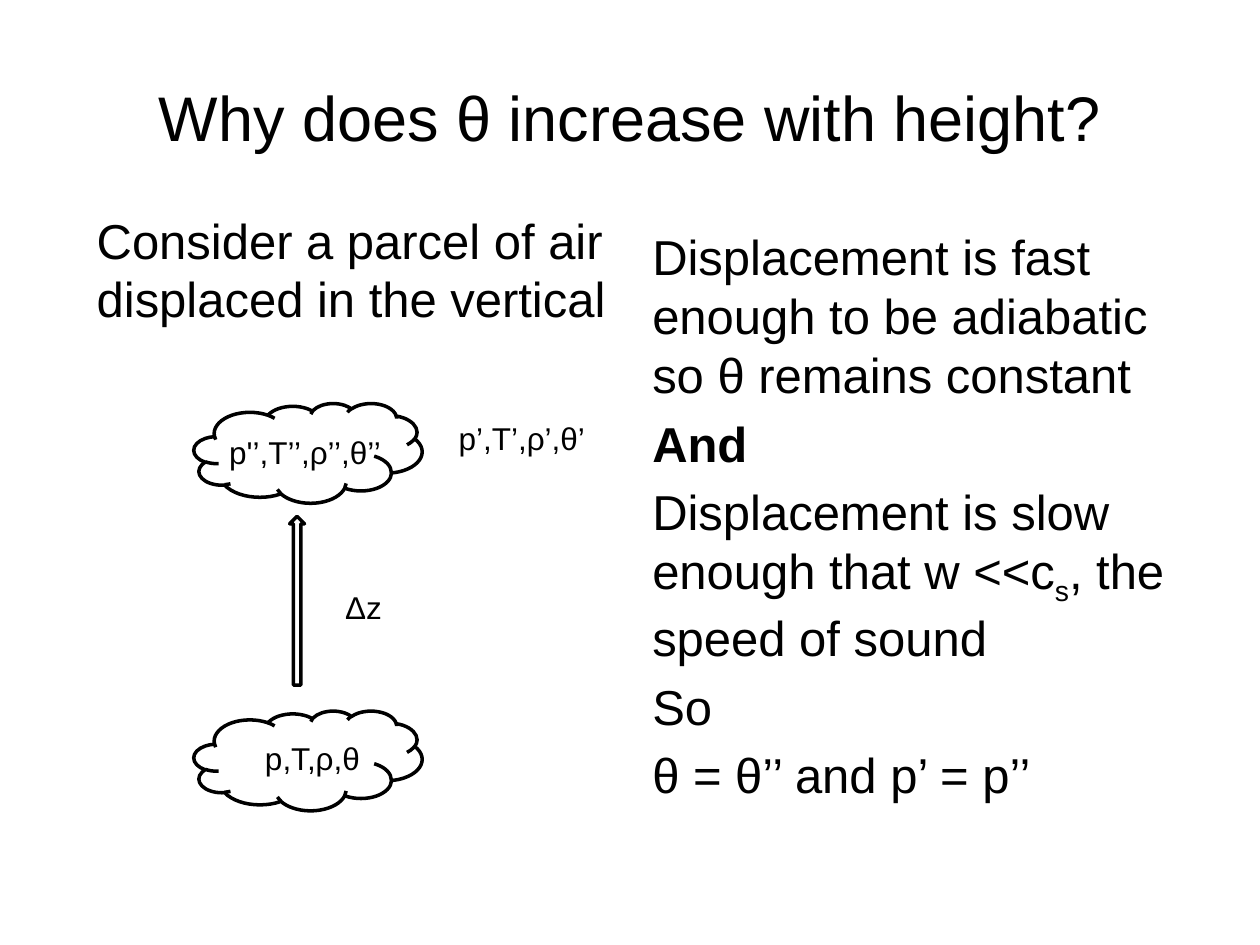
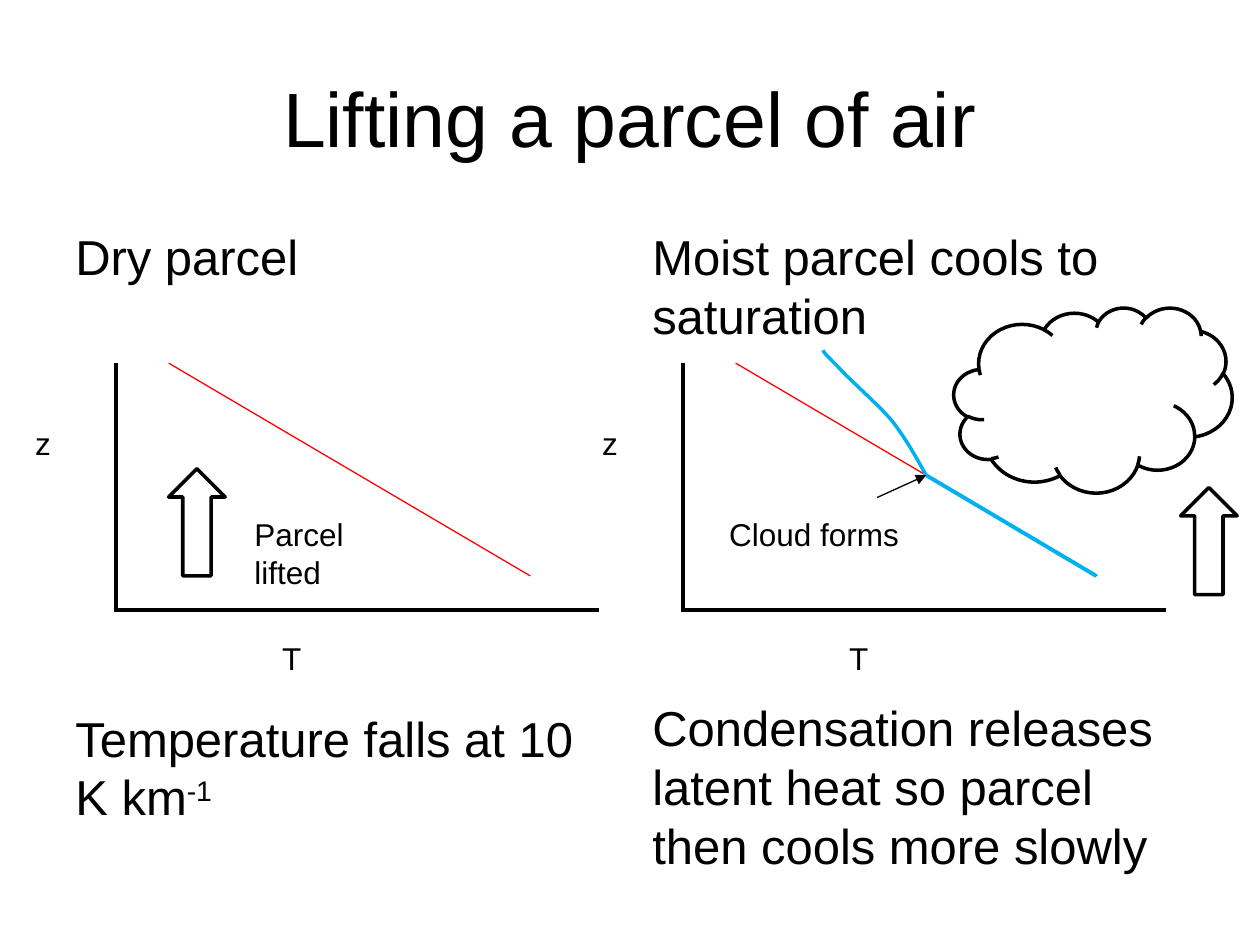
from lxml import etree
from pptx import Presentation
from pptx.dml.color import RGBColor
from pptx.enum.shapes import MSO_CONNECTOR, MSO_SHAPE
from pptx.enum.text import MSO_ANCHOR, PP_ALIGN
from pptx.oxml.ns import qn
from pptx.util import Cm, Pt

LEFT, CENTER = PP_ALIGN.LEFT, PP_ALIGN.CENTER
MIDDLE = MSO_ANCHOR.MIDDLE
CLOUD, UP_ARROW = MSO_SHAPE.CLOUD, MSO_SHAPE.UP_ARROW
STRAIGHT = MSO_CONNECTOR.STRAIGHT

COLOURS = {"ink": "000000", "paper": "FFFFFF", "dry": "FF0000", "moist": "00B0F0"}
FONT = "Arial"
BODY_SIZE, LABEL_SIZE = 28, 18
TITLE_ONLY = 5

LEFT_COLUMN, RIGHT_COLUMN, COLUMN_TOP = 1.27, 12.9, 4.45
COLUMN_WIDTH = 11.23
LABEL_HEIGHT = 1.02


def colour(name):
    return RGBColor.from_string(COLOURS[name])


def bezier(start, *curves, steps=10):
    """Points along joined cubic curves, each given as two controls and an end."""
    points = [start]
    for first, second, end in curves:
        for step in range(1, steps + 1):
            t = step / steps
            points.append(tuple(
                (1 - t) ** 3 * a + 3 * (1 - t) ** 2 * t * b
                + 3 * (1 - t) * t ** 2 * c + t ** 3 * d
                for a, b, c, d in zip(start, first, second, end)))
        start = end
    return points


class Page:
    def __init__(self, deck, title, title_size):
        self.page = deck.slides.add_slide(deck.slide_layouts[TITLE_ONLY])
        self.shapes = self.page.shapes
        box = self.shapes.title
        box.left, box.top, box.width, box.height = Cm(1.27), Cm(0.76), Cm(22.86), Cm(3.18)
        box.text_frame.vertical_anchor = MIDDLE
        self.paragraph(box.text_frame.paragraphs[0], title, title_size, CENTER)

    def paragraph(self, para, content, size, align=LEFT, bold=False):
        """Content is a string, or a list of (text, baseline shift in percent)."""
        para.alignment = align
        para.font.name, para.font.size, para.font.bold = FONT, Pt(size), bold
        para.font.color.rgb = colour("ink")
        for text, shift in [(content, 0)] if isinstance(content, str) else content:
            span = para.add_run()
            span.text = text
            if shift:
                span._r.get_or_add_rPr().set("baseline", str(shift * 1000))

    def frame(self, left, top, width, height):
        frame = self.shapes.add_textbox(Cm(left), Cm(top), Cm(width), Cm(height)).text_frame
        frame.word_wrap = True
        return frame

    def body(self, left, top, height, *contents, bold=()):
        frame = self.frame(left, top, COLUMN_WIDTH, height)
        for index, content in enumerate(contents):
            para = frame.add_paragraph() if index else frame.paragraphs[0]
            para.space_before = Pt(0.2 * BODY_SIZE)
            self.paragraph(para, content, BODY_SIZE, bold=index in bold)

    def label(self, text, left, top, width, height=LABEL_HEIGHT, align=LEFT):
        frame = self.frame(left, top, width, height)
        self.paragraph(frame.paragraphs[0], text, LABEL_SIZE, align)

    def shape(self, kind, left, top, width, height):
        shape = self.shapes.add_shape(kind, Cm(left), Cm(top), Cm(width), Cm(height))
        shape.shadow.inherit = False
        shape.fill.solid()
        shape.fill.fore_color.rgb = colour("paper")
        shape.line.color.rgb = colour("ink")
        shape.line.width = Pt(2)

    def line(self, start, end, name="ink", width=2.25, arrow=False):
        line = self.shapes.add_connector(STRAIGHT, *map(Cm, start + end))
        line.line.color.rgb = colour(name)
        line.line.width = Pt(width)
        properties = line._element.spPr
        if arrow:
            etree.SubElement(line.line._get_or_add_ln(), qn("a:tailEnd"), type="triangle")
        etree.SubElement(properties, qn("a:effectLst"))

    def curve(self, points, name):
        points = [(Cm(x), Cm(y)) for x, y in points]
        builder = self.shapes.build_freeform(*points[0])
        builder.add_line_segments(points[1:], close=False)
        curve = builder.convert_to_shape()
        curve.shadow.inherit = False
        curve.fill.background()
        curve.line.color.rgb = colour(name)
        curve.line.width = Pt(2)

    def height_chart(self, offset):
        """Axes of height against temperature with the dry line."""
        corner = (2.34 + offset, 12.29)
        self.line((corner[0], 7.32), (corner[0], 12.34))
        self.line(corner, (12.07 + offset, 12.29))
        self.label("T", 5.44 + offset, 12.75, 2.36)
        self.label("z", 0.46 + offset, 8.43, 1.52)
        self.line((10.69 + offset, 11.61), (3.4 + offset, 7.32), "dry", 0.75)


def displaced_parcel(deck):
    page = Page(deck, "Why does θ increase with height?", 36)
    page.body(1.7, 4.11, 3, "Consider a parcel of air displaced in the vertical")
    page.body(
        RIGHT_COLUMN, COLUMN_TOP, 12.57,
        "Displacement is fast enough to be adiabatic so θ remains constant",
        "And",
        [("Displacement is slow enough that w <<c", 0), ("s", -25), (", the speed of sound", 0)],
        "So",
        "θ = θ’’ and p’ = p’’",
        bold=(1,))

    # Parcel before and after the displacement
    for top in (14.33, 8.13):
        page.shape(CLOUD, 3.91, top, 4.6, 2.01)
    page.shape(UP_ARROW, 5.84, 10.41, 0.3, 3.4)
    page.label("Δz", 6.71, 11.73, 2)
    page.label("p,T,ρ,θ", 4.7, 14.78, 3.2, align=CENTER)
    page.label("p'’,T’’,ρ’’,θ’’", 4.22, 8.61, 3.86, align=CENTER)
    page.label("p’,T’,ρ’,θ’", 8.59, 8.33, 3.86, align=CENTER)


def lifted_parcel(deck):
    page = Page(deck, "Lifting a parcel of air", 44)
    page.body(LEFT_COLUMN, COLUMN_TOP, 1.5, "Dry parcel")
    page.body(LEFT_COLUMN, 14.15, 2.8, [("Temperature falls at 10 K km", 0), ("-1", 30)])
    page.body(RIGHT_COLUMN, COLUMN_TOP, 2.8, "Moist parcel cools to saturation")
    page.body(RIGHT_COLUMN, 13.94, 4,
              "Condensation releases latent heat so parcel then cools more slowly")
    for offset in (0, 11.43):
        page.height_chart(offset)

    # Moist parcel: saturation point, slower cooling above it, cloud
    saturation = (18.67, 9.58)
    page.curve(bezier(
        saturation,
        ((18.47, 9.22), (18.26, 8.84), (17.98, 8.48)),
        ((17.68, 8.13), (17.12, 7.65), (16.89, 7.39)),
        ((16.66, 7.16), (16.61, 7.11), (16.59, 7.06))), "moist")
    page.shape(CLOUD, 19.23, 6.2, 5.61, 3.73)
    page.label("Cloud forms", 14.45, 10.26, 5.18)
    page.line((17.68, 10.03), saturation, width=0.75, arrow=True)
    page.line((22.1, 11.61), saturation, "moist")

    # Lifting arrows
    for left, top in ((3.4, 9.45), (23.8, 9.83)):
        page.shape(UP_ARROW, left, top, 1.14, 2.16)
    page.label("Parcel lifted", 4.88, 10.26, 2.64, 1.8)


def main():
    deck = Presentation()
    deck.slide_width, deck.slide_height = Cm(25.4), Cm(19.05)
    displaced_parcel(deck)
    lifted_parcel(deck)
    deck.save("out.pptx")


if __name__ == "__main__":
    main()
